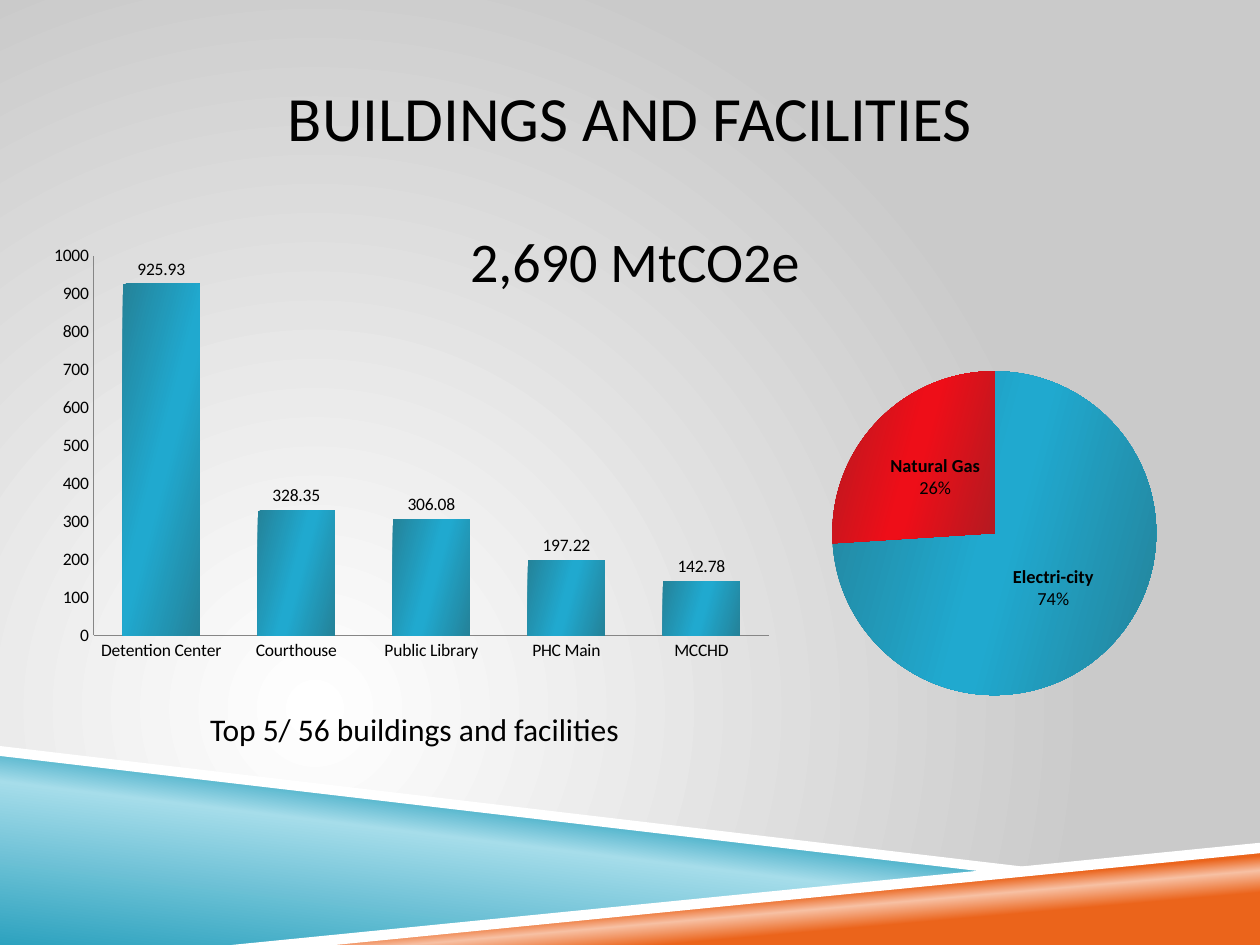
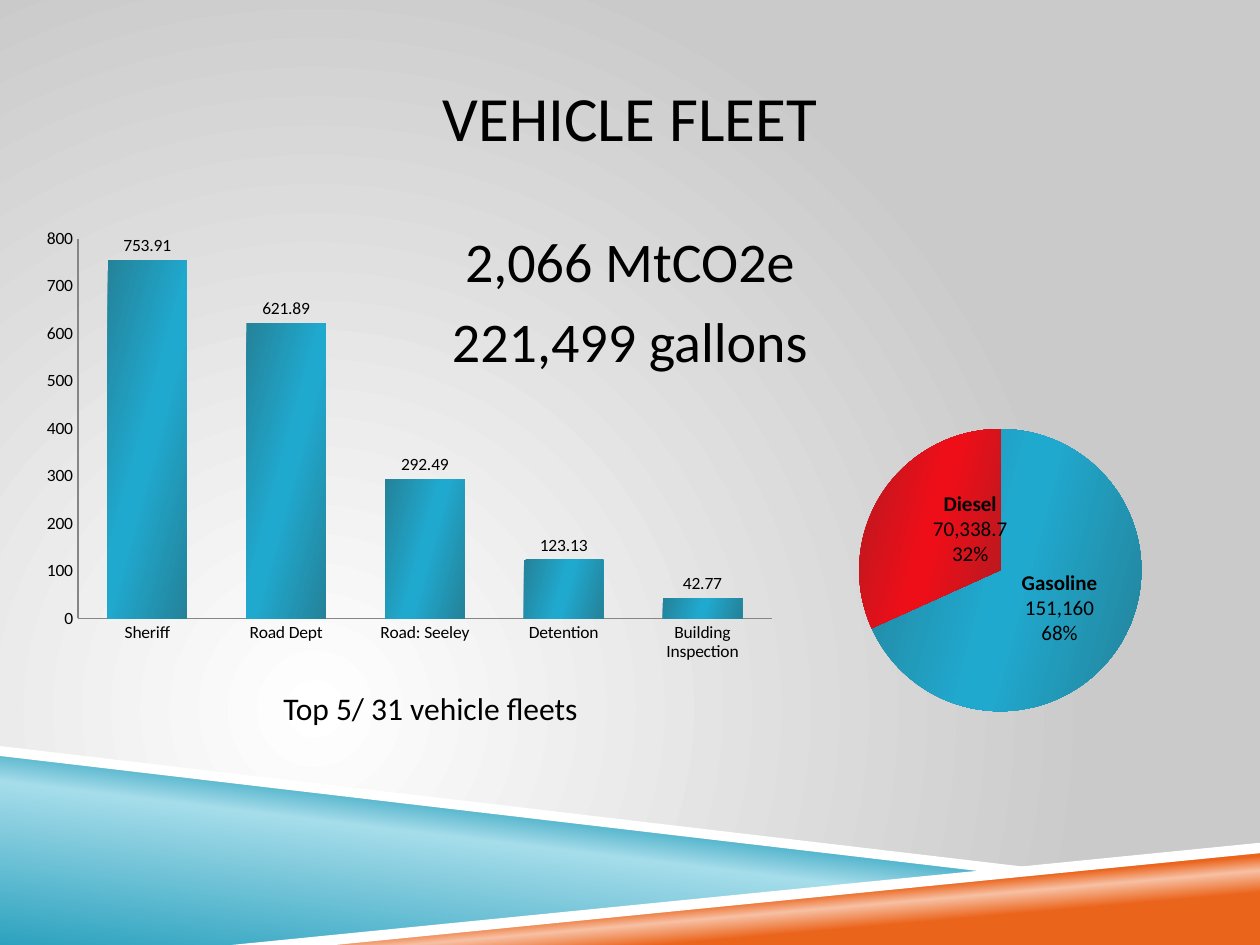
import pptx
import pptx.chart.data
import pptx.dml.color
import pptx.enum.chart
import pptx.enum.text
import pptx.oxml
import pptx.oxml.ns
import pptx.util

Cm = pptx.util.Cm
Pt = pptx.util.Pt
RGBColor = pptx.dml.color.RGBColor
qn = pptx.oxml.ns.qn
chart_enum = pptx.enum.chart

FONT = "Calibri"
BLACK = RGBColor(0x00, 0x00, 0x00)
WHITE = RGBColor(0xFF, 0xFF, 0xFF)
BACKDROP_GRAY = RGBColor(0xCA, 0xCA, 0xCA)
AXIS_GRAY = RGBColor(0x86, 0x86, 0x86)
TEAL = RGBColor(0x2D, 0xA2, 0xBF)
PALE_TEAL = RGBColor(0xA6, 0xDD, 0xEA)
BRIGHT_TEAL = RGBColor(0x20, 0xA9, 0xCF)
DARK_TEAL = RGBColor(0x24, 0x82, 0x99)
ORANGE = RGBColor(0xEB, 0x64, 0x1B)
PALE_ORANGE = RGBColor(0xF7, 0xC1, 0xA4)
BRIGHT_RED = RGBColor(0xEE, 0x0E, 0x18)
DARK_RED = RGBColor(0xB3, 0x1A, 0x21)

# Gradients: (percent, colour) stops and a clockwise angle
TEAL_BAND = ([(0, TEAL), (52, PALE_TEAL), (66, TEAL)], 277)
ORANGE_BAND = ([(28, ORANGE), (40, PALE_ORANGE), (48, ORANGE)], 265)
TEAL_SHEEN = ([(0, DARK_TEAL), (48, BRIGHT_TEAL), (54, BRIGHT_TEAL), (100, DARK_TEAL)], 15)
RED_SHEEN = ([(0, DARK_RED), (48, BRIGHT_RED), (54, BRIGHT_RED), (100, DARK_RED)], 15)

# Corner points in centimetres, from back to front
BANDS = [
    ([(0, 15.16), (20.12, 17.58), (5.08, 19.05), (0, 19.05)], TEAL_BAND),
    ([(5.03, 19.05), (25.4, 17.07), (25.4, 19.05)], ORANGE_BAND),
    ([(0, 15.04), (0, 15.24), (20.07, 17.6), (21.13, 17.53)], None),
    ([(25.4, 16.99), (4.67, 19.05), (6.76, 19.05), (25.4, 17.2)], None),
]

TITLE_BOX = (1.9, 0.76, 21.6, 3.18)

# Boxes are left, top, width, height in centimetres; plots lie inside their chart box
SLIDES = [
    {
        "title": "BUILDINGS AND FACILITIES",
        "totals": ["2,690 MtCO2e"],
        "totals_box": (1.27, 4.44, 23.06, 1.7),
        "columns_box": (0.64, 4.88, 15.24, 8.89),
        "columns_plot": (1.25, 0.28, 13.61, 7.65),
        "columns": {"Detention Center": 925.93, "Courthouse": 328.35,
                    "Public Library": 306.08, "PHC Main": 197.22, "MCCHD": 142.78},
        "maximum": 1000,
        "pie_box": (16.08, 7.19, 8.15, 7.32),
        "pie_plot": (0.7, 0.29, 6.53, 6.54),
        "pie": {"Electricity": 74, "Natural Gas": 26},
        "pie_format": "0",
        "pie_labels": ["Electri-city\n74%", "Natural Gas\n26%"],
        "label_size": 10.5,
        "show_value": False,
        "label_shifts": [None, None],
        "caption": "Top 5/ 56 buildings and facilities",
        "caption_box": (0.84, 14.18, 15.04, 1.02),
    },
    {
        "title": "VEHICLE FLEET",
        "totals": ["2,066 MtCO2e", "221,499 gallons"],
        "totals_box": (1.27, 4.44, 22.86, 5.08),
        "columns_box": (0.64, 4.45, 15.24, 8.89),
        "columns_plot": (0.93, 0.37, 13.99, 7.84),
        "columns": {"Sheriff": 753.91, "Road Dept": 621.89, "Road: Seeley": 292.49,
                    "Detention": 123.13, "Building Inspection": 42.77},
        "maximum": 800,
        "pie_box": (13.97, 7.42, 10.97, 7.42),
        "pie_plot": (3.35, 1.23, 5.69, 5.69),
        "pie": {"Gasoline": 151160, "Diesel": 70338.7},
        "pie_format": "#,##0.0",
        "pie_labels": ["Gasoline\n151,160\n68%", "Diesel\n70,338.7\n32%"],
        "label_size": 12,
        "show_value": True,
        "label_shifts": [None, (0.59, -0.06)],
        "caption": "Top 5/ 31 vehicle fleets",
        "caption_box": (1.48, 13.77, 14.4, 1.02),
    },
]


def parse(markup):
    """Parse one element whose root still lacks its namespace declarations."""
    name, rest = markup[1:].split(">", 1)
    closing = "/" if name.endswith("/") else ""
    declarations = pptx.oxml.ns.nsdecls("a", "c")
    return pptx.oxml.parse_xml(f"<{name.rstrip('/')} {declarations}{closing}>{rest}")


def fill_gradient(fill, stops, direction):
    fill.gradient()
    gradient = fill._xPr.find(qn("a:gradFill"))
    gradient.clear()
    stop_markup = "".join(
        f'<a:gs pos="{percent * 1000}"><a:srgbClr val="{color}"/></a:gs>'
        for percent, color in stops)
    gradient.append(parse(f"<a:gsLst>{stop_markup}</a:gsLst>"))
    gradient.append(parse(direction))


def fill_linear(fill, stops, angle):
    fill_gradient(fill, stops, f'<a:lin ang="{angle * 60000}" scaled="0"/>')


def place(shape, box):
    shape.left, shape.top, shape.width, shape.height = map(Cm, box)


def style_font(font, size):
    font.name = FONT
    font.size = Pt(size)
    font.color.rgb = BLACK


def style_paragraph(paragraph, size):
    paragraph.alignment = pptx.enum.text.PP_ALIGN.CENTER
    style_font(paragraph.font, size)


def set_backdrop(master):
    fill_gradient(master.background.fill, [(0, WHITE), (100, BACKDROP_GRAY)],
                  '<a:path path="circle"><a:fillToRect l="50000" t="100000" '
                  'r="100000" b="50000"/></a:path>')


def add_bands(slide):
    for position, (points, gradient) in enumerate(BANDS, start=2):
        corners = [(Cm(x), Cm(y)) for x, y in points]
        builder = slide.shapes.build_freeform(*corners[0])
        builder.add_line_segments(corners[1:], close=True)
        band = builder.convert_to_shape()
        band.shadow.inherit = False
        band.line.fill.background()
        if gradient:
            fill_linear(band.fill, *gradient)
        else:
            band.fill.solid()
            band.fill.fore_color.rgb = WHITE
        # Keep the bands behind the text
        slide.shapes._spTree.insert(position, band._element)


def fill_placeholder(placeholder, box, lines, size, anchor):
    place(placeholder, box)
    frame = placeholder.text_frame
    frame.text = "\n".join(lines)
    frame.margin_left = frame.margin_right = 0
    frame.vertical_anchor = anchor
    frame.auto_size = pptx.enum.text.MSO_AUTO_SIZE.NONE
    for index, paragraph in enumerate(frame.paragraphs):
        properties = paragraph._p.get_or_add_pPr()
        properties.set("marL", "0")
        properties.set("indent", "0")
        properties.append(parse("<a:buNone/>"))
        paragraph.space_before = Pt(7 if index else 0)
        style_paragraph(paragraph, size)


def add_caption(slide, box, text):
    caption = slide.shapes.add_textbox(*map(Cm, box))
    caption.text_frame.word_wrap = True
    caption.text_frame.text = text
    style_paragraph(caption.text_frame.paragraphs[0], 18)


def manual_layout(**settings):
    markup = "".join(f'<c:{name} val="{value}"/>' for name, value in settings.items())
    return parse(f"<c:layout><c:manualLayout>{markup}</c:manualLayout></c:layout>")


def add_plain_chart(slide, kind, box, plot_box, values, number_format="General"):
    """Add a one-series chart without legend, title or background."""
    data = pptx.chart.data.CategoryChartData(number_format=number_format)
    data.categories = list(values)
    data.add_series("Series 1", list(values.values()))
    chart = slide.shapes.add_chart(kind, *map(Cm, box), data).chart
    chart.has_legend = False
    chart.has_title = False
    style_font(chart.font, 10)

    chart_element = chart._chartSpace.chart
    plot_area = chart_element.plotArea
    for old_layout in plot_area.findall(qn("c:layout")):
        plot_area.remove(old_layout)
    x, y, width, height = plot_box
    chart_width, chart_height = box[2:]
    plot_area.insert(0, manual_layout(
        layoutTarget="inner", xMode="edge", yMode="edge",
        x=x / chart_width, y=y / chart_height,
        w=width / chart_width, h=height / chart_height))
    no_fill = "<c:spPr><a:noFill/><a:ln><a:noFill/></a:ln></c:spPr>"
    plot_area.append(parse(no_fill))
    chart_element.addnext(parse(no_fill))
    return chart


def add_columns(slide, box, plot_box, values, maximum):
    chart = add_plain_chart(slide, chart_enum.XL_CHART_TYPE.COLUMN_CLUSTERED,
                            box, plot_box, values)
    plot = chart.plots[0]
    plot.gap_width = 75
    plot.vary_by_categories = False
    fill_linear(plot.series[0].format.fill, *TEAL_SHEEN)
    plot.has_data_labels = True
    labels = plot.data_labels
    labels.show_value = True
    labels.position = chart_enum.XL_LABEL_POSITION.OUTSIDE_END
    style_font(labels.font, 10)

    for axis in (chart.category_axis, chart.value_axis):
        axis.has_major_gridlines = False
        axis.major_tick_mark = axis.minor_tick_mark = chart_enum.XL_TICK_MARK.NONE
        axis.format.line.color.rgb = AXIS_GRAY
        axis.format.line.width = Pt(0.75)
        style_font(axis.tick_labels.font, 10)
    chart.value_axis.minimum_scale = 0
    chart.value_axis.maximum_scale = maximum
    chart.value_axis.major_unit = 100


def add_pie(slide, content):
    box, label_size = content["pie_box"], content["label_size"]
    chart = add_plain_chart(slide, chart_enum.XL_CHART_TYPE.PIE, box, content["pie_plot"],
                            content["pie"], content["pie_format"])
    series = chart.plots[0].series[0]
    labels = series.data_labels
    labels.show_category_name = labels.show_percentage = True
    labels.show_value = content["show_value"]
    labels.position = chart_enum.XL_LABEL_POSITION.CENTER
    style_font(labels.font, label_size)

    slices = zip(content["pie_labels"], content["label_shifts"], (TEAL_SHEEN, RED_SHEEN))
    for index, (text, shift, sheen) in enumerate(slices):
        point = series.points[index]
        fill_linear(point.format.fill, *sheen)
        label = point.data_label
        label.text_frame.text = text
        for line, paragraph in enumerate(label.text_frame.paragraphs):
            font = paragraph.runs[0].font
            style_font(font, label_size)
            font.bold = line == 0
        label.position = chart_enum.XL_LABEL_POSITION.CENTER
        for flag, shown in (("showVal", content["show_value"]),
                            ("showCatName", True), ("showPercent", True)):
            label._dLbl.find(qn(f"c:{flag}")).set("val", str(int(shown)))
        if shift:
            label._dLbl.insert(1, manual_layout(x=shift[0] / box[2], y=shift[1] / box[3]))


def add_emissions_slide(presentation, content):
    slide = presentation.slides.add_slide(presentation.slide_layouts[1])
    add_bands(slide)
    anchors = pptx.enum.text.MSO_ANCHOR
    fill_placeholder(slide.shapes.title, TITLE_BOX, [content["title"]], 36, anchors.MIDDLE)
    fill_placeholder(slide.placeholders[1], content["totals_box"], content["totals"],
                     32, anchors.TOP)
    add_columns(slide, content["columns_box"], content["columns_plot"],
                content["columns"], content["maximum"])
    add_pie(slide, content)
    add_caption(slide, content["caption_box"], content["caption"])


def main():
    presentation = pptx.Presentation()
    presentation.slide_width = Cm(25.4)
    presentation.slide_height = Cm(19.05)
    set_backdrop(presentation.slide_master)
    for content in SLIDES:
        add_emissions_slide(presentation, content)
    presentation.save("out.pptx")


if __name__ == "__main__":
    main()
